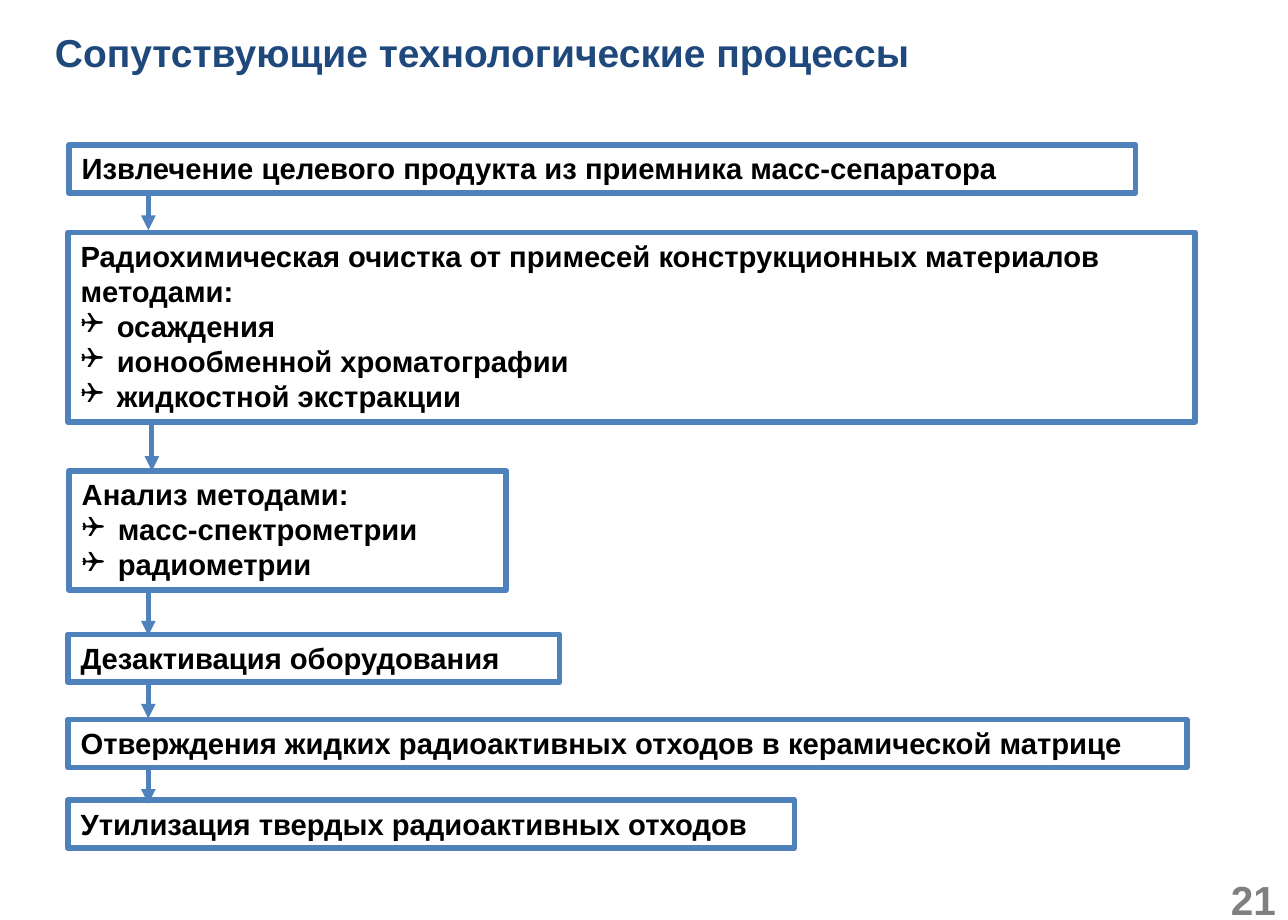
"""Build the slide on accompanying technological processes."""
from dataclasses import dataclass

from lxml import etree
from pptx import Presentation
from pptx.dml.color import RGBColor
from pptx.enum.shapes import MSO_CONNECTOR, MSO_SHAPE
from pptx.enum.text import MSO_ANCHOR, MSO_AUTO_SIZE, PP_ALIGN
from pptx.oxml.ns import qn
from pptx.util import Inches, Pt

RECT, LINE = MSO_SHAPE.RECTANGLE, MSO_CONNECTOR.STRAIGHT
TOP, MIDDLE = MSO_ANCHOR.TOP, MSO_ANCHOR.MIDDLE
LEFT, RIGHT = PP_ALIGN.LEFT, PP_ALIGN.RIGHT
FIXED = MSO_AUTO_SIZE.NONE


@dataclass(frozen=True)
class Theme:
    face: str = "Arial"
    mark: str = "Wingdings"
    navy: str = "1F497D"
    blue: str = "4F81BD"
    ink: str = "000000"
    gray: str = "808080"
    head: int = 24
    body: int = 18
    page: int = 25
    edge: float = 3.5
    arrow: float = 3


theme = Theme()


def style(para, size, color, align=LEFT):
    para.alignment = align
    font = para.font
    font.name, font.size, font.bold = theme.face, Pt(size), True
    font.color.rgb = RGBColor.from_string(color)


def setup(frame, anchor, side=0.1, bottom=0.05):
    frame.word_wrap = True
    frame.auto_size = FIXED
    frame.vertical_anchor = anchor
    frame.margin_left = frame.margin_right = Inches(side)
    frame.margin_top, frame.margin_bottom = Inches(0.05), Inches(bottom)


deck = Presentation()
deck.slide_width, deck.slide_height = Pt(793.75), Pt(567)
slide = deck.slides.add_slide(deck.slide_layouts[5])
shapes = slide.shapes

title = shapes.title
title.left, title.top = Inches(0.37), Inches(0.19)
title.width, title.height = Inches(9.2), Inches(0.61)
title.text_frame.text = "Сопутствующие технологические процессы"
setup(title.text_frame, MIDDLE, bottom=0.15)
style(title.text_frame.paragraphs[0], theme.head, theme.navy)

steps = [
    (0.59, 1.24, 9.13, 0.41,
     "Извлечение целевого продукта из приемника масс-сепаратора", []),
    (0.58, 1.99, 9.65, 1.62,
     "Радиохимическая очистка от примесей конструкционных материалов методами:",
     ["осаждения", "ионообменной хроматографии", "жидкостной экстракции"]),
    (0.59, 4.03, 3.74, 1.02, "Анализ методами:",
     ["масс-спектрометрии", "радиометрии"]),
    (0.58, 5.43, 4.21, 0.41, "Дезактивация оборудования", []),
    (0.58, 6.16, 9.58, 0.41,
     "Отверждения жидких радиоактивных отходов в керамической матрице", []),
    (0.58, 6.85, 6.22, 0.41, "Утилизация твердых радиоактивных отходов", []),
]
for left, top, width, height, text, items in steps:
    box = shapes.add_shape(RECT, Inches(left), Inches(top),
                           Inches(width), Inches(height))
    box.shadow.inherit = False
    box.fill.background()
    box.line.color.rgb = RGBColor.from_string(theme.blue)
    box.line.width = Pt(theme.edge)
    frame = box.text_frame
    setup(frame, TOP, side=0.11)
    frame.text = "\n".join([text, *items])
    for row, para in enumerate(frame.paragraphs):
        if row:
            props = para._p.get_or_add_pPr()
            props.set("marL", str(Inches(0.31)))
            props.set("indent", str(-Inches(0.31)))
            etree.SubElement(props, qn("a:buFont"), typeface=theme.mark)
            etree.SubElement(props, qn("a:buChar"), char="❑")
        style(para, theme.body, theme.ink)

arrows = [(1.27, 1.67, 1.97), (1.3, 3.61, 4.03), (1.27, 5.04, 5.44),
          (1.27, 5.85, 6.15), (1.27, 6.58, 6.88)]
for x, start, end in arrows:
    arrow = shapes.add_connector(LINE, Inches(x), Inches(start),
                                 Inches(x), Inches(end))
    arrow.line.color.rgb = RGBColor.from_string(theme.blue)
    arrow.line.width = Pt(theme.arrow)
    etree.SubElement(arrow.line._get_or_add_ln(), qn("a:tailEnd"),
                     type="triangle")
    etree.SubElement(arrow._element.spPr, qn("a:effectLst"))

page = shapes.add_textbox(Inches(10.26), Inches(7.44),
                          Inches(0.76), Inches(0.43))
setup(page.text_frame, TOP)
page.text_frame.text = "21"
style(page.text_frame.paragraphs[0], theme.page, theme.gray, RIGHT)

deck.save("out.pptx")
